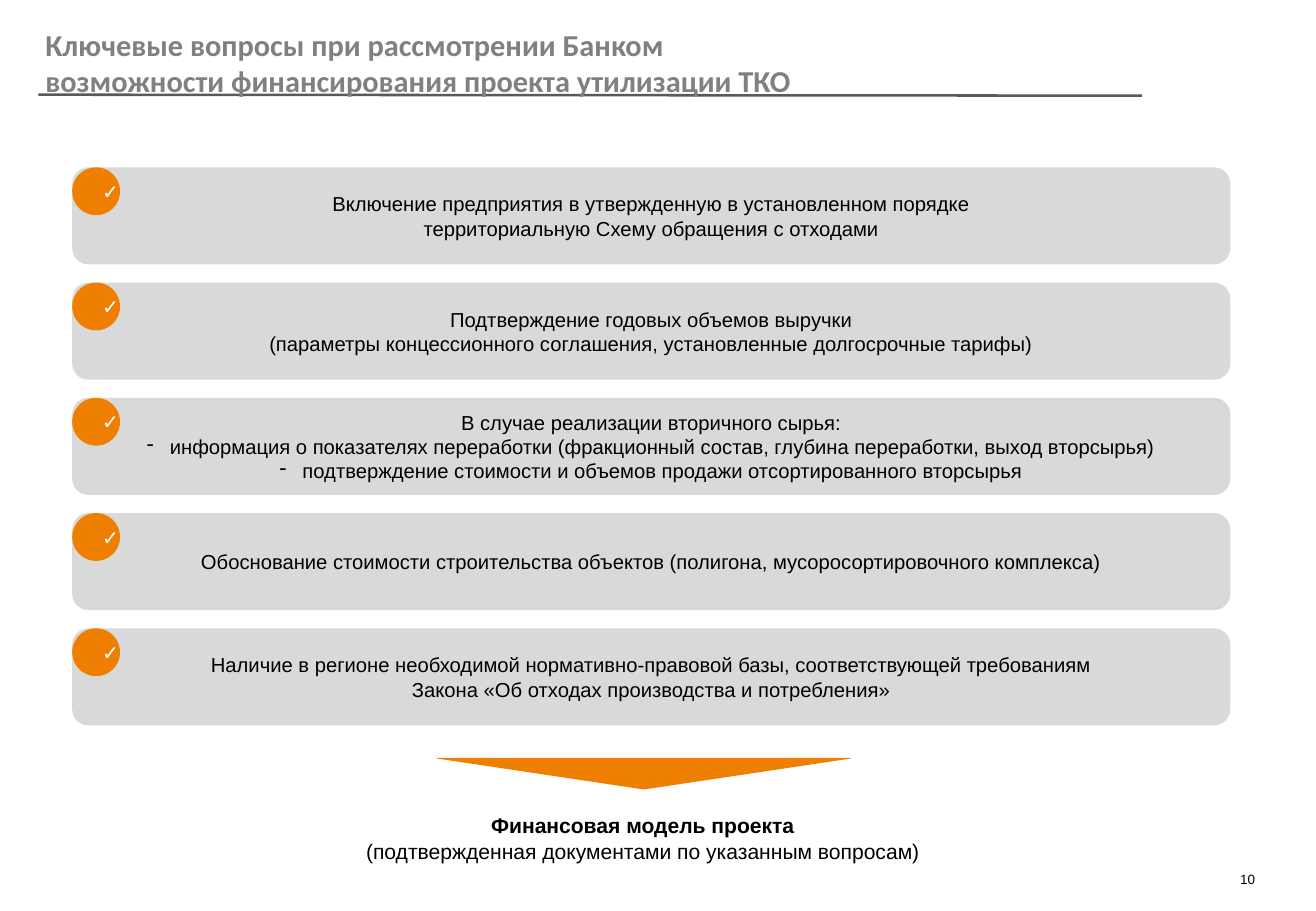
from lxml import etree
from pptx import Presentation
from pptx.dml.color import RGBColor
from pptx.enum import shapes, text
from pptx.oxml.ns import qn
from pptx.util import Cm, Pt

TITLE = ["Ключевые вопросы при рассмотрении Банком",
         "возможности финансирования проекта утилизации ТКО"]
# Lines starting with "- " become dash bullets.
QUESTIONS = [
    ["Включение предприятия в утвержденную в установленном порядке",
     "территориальную Схему обращения с отходами"],
    ["Подтверждение годовых объемов выручки",
     "(параметры концессионного соглашения, установленные долгосрочные тарифы)"],
    ["В случае реализации вторичного сырья:",
     "- информация о показателях переработки (фракционный состав, глубина переработки, выход вторсырья)",
     "- подтверждение стоимости и объемов продажи отсортированного вторсырья"],
    ["Обоснование стоимости строительства объектов (полигона, мусоросортировочного комплекса)"],
    ["Наличие в регионе необходимой нормативно-правовой базы, соответствующей требованиям",
     "Закона «Об отходах производства и потребления»"],
]
RESULT = ["Финансовая модель проекта",
          "(подтвержденная документами по указанным вопросам)"]
PAGE_NUMBER = "10"

BLACK = RGBColor(0x00, 0x00, 0x00)
WHITE = RGBColor(0xFF, 0xFF, 0xFF)
TITLE_GRAY = RGBColor(0x80, 0x80, 0x80)
RULE_GRAY = RGBColor(0x59, 0x59, 0x59)
CARD_GRAY = RGBColor(0xD9, 0xD9, 0xD9)
ORANGE = RGBColor(0xEE, 0x7F, 0x00)

LEFT, CARD_TOP, CARD_STEP = Cm(1.51), Cm(3.5), Cm(2.41)
CARD_WIDTH, CARD_HEIGHT = Cm(24.21), Cm(2.03)
BADGE_SIZE = Cm(1)
DASH_INDENT = Cm(0.48)

ALIGN = text.PP_ALIGN
MIDDLE = text.MSO_ANCHOR.MIDDLE
SHAPE = shapes.MSO_SHAPE


def add_dash(paragraph):
    props = paragraph._p.get_or_add_pPr()
    props.set("marL", str(DASH_INDENT))
    props.set("indent", str(-DASH_INDENT))
    etree.SubElement(props, qn("a:buChar")).set("char", "-")


def write(frame, lines, size, color=BLACK, font="Arial", align=ALIGN.CENTER, bold_lines=0):
    """Fill a frame with one paragraph per line; the first bold_lines are bold."""
    frame.word_wrap = True
    for i, line in enumerate(lines):
        paragraph = frame.add_paragraph() if i else frame.paragraphs[0]
        paragraph.alignment = align
        if line.startswith("- "):
            add_dash(paragraph)
        run = paragraph.add_run()
        run.text = line.removeprefix("- ")
        run.font.name = font
        run.font.size = Pt(size)
        run.font.bold = i < bold_lines
        run.font.color.rgb = color


def add_filled(slide, kind, box, color):
    shape = slide.shapes.add_shape(kind, *box)
    shape.shadow.inherit = False
    shape.fill.solid()
    shape.fill.fore_color.rgb = color
    shape.line.fill.background()
    shape.text_frame.vertical_anchor = MIDDLE
    return shape


def add_label(slide, box):
    return slide.shapes.add_textbox(*map(Cm, box)).text_frame


def add_question(slide, top, lines):
    card = add_filled(slide, SHAPE.ROUNDED_RECTANGLE,
                      (LEFT, top, CARD_WIDTH, CARD_HEIGHT), CARD_GRAY)
    write(card.text_frame, lines, 12)
    badge = add_filled(slide, SHAPE.OVAL, (LEFT, top, BADGE_SIZE, BADGE_SIZE), ORANGE)
    frame = badge.text_frame
    frame.margin_left = Cm(0.48)
    frame.margin_right = frame.margin_top = frame.margin_bottom = 0
    write(frame, ["✓"], 12, WHITE, align=ALIGN.LEFT)


def main():
    prs = Presentation()
    prs.slide_width, prs.slide_height = Cm(27.51), Cm(19.05)
    slide = prs.slides.add_slide(prs.slide_layouts[6])

    rule = slide.shapes.add_connector(shapes.MSO_CONNECTOR.STRAIGHT,
                                      Cm(0.8), Cm(1.98), Cm(23.87), Cm(2))
    rule.line.color.rgb = RULE_GRAY
    rule.line.width = Pt(1.5)
    etree.SubElement(rule._element.spPr, qn("a:effectLst"))
    write(add_label(slide, (0.7, 0.42, 23.6, 1.8)), TITLE, 18, TITLE_GRAY,
          "Calibri", ALIGN.LEFT, bold_lines=2)

    for row, lines in enumerate(QUESTIONS):
        add_question(slide, CARD_TOP + row * CARD_STEP, lines)

    arrow = add_filled(slide, SHAPE.PENTAGON,
                       (Cm(13.13), Cm(11.86), Cm(0.66), Cm(8.64)), ORANGE)
    arrow.rotation = 90
    arrow.adjustments[0] = 0.98

    write(add_label(slide, (6.55, 16.87, 13.77, 1.32)), RESULT, 12.5, bold_lines=1)
    number = add_label(slide, (20.57, 17.73, 5.92, 1.32))
    number.vertical_anchor = MIDDLE
    write(number, [PAGE_NUMBER], 8, align=ALIGN.RIGHT)

    prs.save("out.pptx")


if __name__ == "__main__":
    main()
